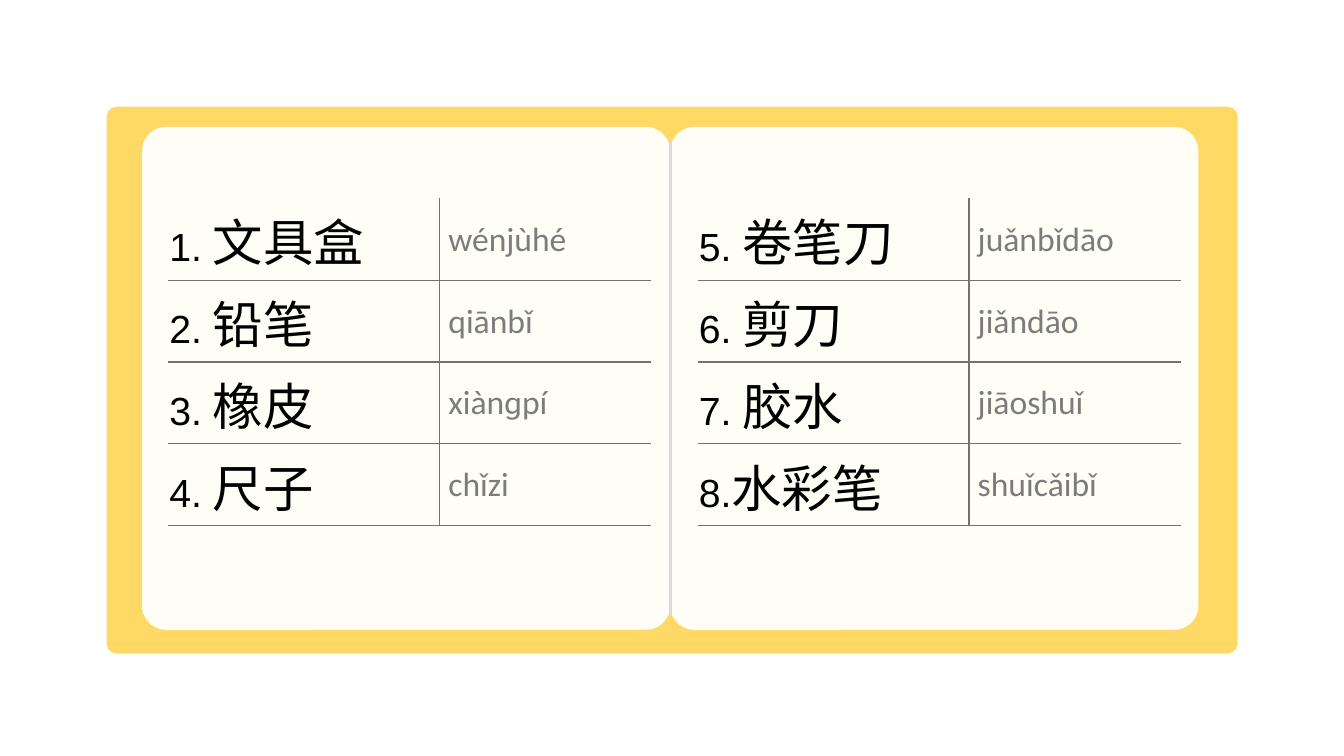
from lxml.etree import SubElement as Sub
from pptx import Presentation
from pptx.dml.color import RGBColor
from pptx.enum.shapes import MSO_CONNECTOR as Link, MSO_SHAPE as Form
from pptx.enum.text import MSO_ANCHOR as Anchor
from pptx.oxml.ns import qn
from pptx.util import Cm, Pt

hue = RGBColor.from_string


def add_run(para, text, size, font, color):
    run = para.add_run()
    run.text = text
    run.font.size = Pt(size)
    run.font.color.rgb = hue(color)
    run.font.name = font
    Sub(run._r.get_or_add_rPr(), qn("a:ea"), typeface=font)


def add_edge(cell, side, color):
    edge = Sub(cell._tc.get_or_add_tcPr(), qn("a:ln" + side), w=str(Pt(1)))
    if color:
        fill = Sub(edge, qn("a:solidFill"))
        Sub(fill, qn("a:srgbClr"), val=color)
    else:
        Sub(edge, qn("a:noFill"))


deck = Presentation()
deck.slide_width, deck.slide_height = Cm(33.87), Cm(19.05)
slide = deck.slides.add_slide(deck.slide_layouts[6])

# Open book: cover and two pages
book = slide.shapes.add_group_shape()
fold = 16.89
for left, top, wide, high, bend, color in [
    (2.69, 2.69, 28.5, 13.78, 0.018, "FFD966"),
    (fold - 13.31, 3.2, 13.31, 12.67, 0.048, "FFFEF6"),
    (fold, 3.2, 13.31, 12.67, 0.048, "FFFEF6"),
]:
    sheet = book.shapes.add_shape(Form.ROUNDED_RECTANGLE, Cm(left), Cm(top), Cm(wide), Cm(high))
    sheet.adjustments[0] = bend
    sheet.fill.solid()
    sheet.fill.fore_color.rgb = hue(color)
    sheet.line.fill.background()
    sheet.shadow.inherit = False

# Word lists, one table on each page
lists = [
    (4.24, [("1. ", "文具盒", "wénjùhé"), ("2. ", "铅笔", "qiānbǐ"),
            ("3. ", "橡皮", "xiànɡpí"), ("4. ", "尺子", "chǐzi")]),
    (17.58, [("5. ", "卷笔刀", "juǎnbǐdāo"), ("6. ", "剪刀", "jiǎndāo"),
             ("7. ", "胶水", "jiāoshuǐ"), ("8.", "水彩笔", "shuǐcǎibǐ")]),
]
gray = "767171"
for left, words in lists:
    frame = slide.shapes.add_table(4, 2, Cm(left), Cm(5), Cm(12.17), Cm(8.24))
    table = frame.table
    table.first_row = table.horz_banding = False
    table.columns[0].width, table.columns[1].width = Cm(6.84), Cm(5.33)
    for row, (num, word, sound) in enumerate(words):
        table.rows[row].height = Cm(2.06)
        for col in range(2):
            cell = table.cell(row, col)
            cell.vertical_anchor = Anchor.MIDDLE
            cell.margin_left = Cm(0.22 if col else 0.03)
            cell.margin_right = cell.margin_top = Cm(0.03)
            cell.margin_bottom = 0
            add_edge(cell, "L", gray if col else None)
            add_edge(cell, "R", None if col else gray)
            add_edge(cell, "T", gray if row else None)
            add_edge(cell, "B", gray)
            cell.fill.background()
            para = cell.text_frame.paragraphs[0]
            if col:
                add_run(para, sound, 24, "Calibri", "7C7C7C")
            else:
                add_run(para, num, 28, "Arial", "000000")
                add_run(para, word, 36, "Noto Sans CJK SC", "000000")

# Fold between the pages
crease = slide.shapes.add_connector(Link.STRAIGHT, Cm(fold), Cm(3.58), Cm(fold), Cm(15.49))
crease.line.color.rgb = hue("D9D9D9")
crease.line.width = Pt(2.25)
Sub(crease._element.spPr, qn("a:effectLst"))

deck.save("out.pptx")
